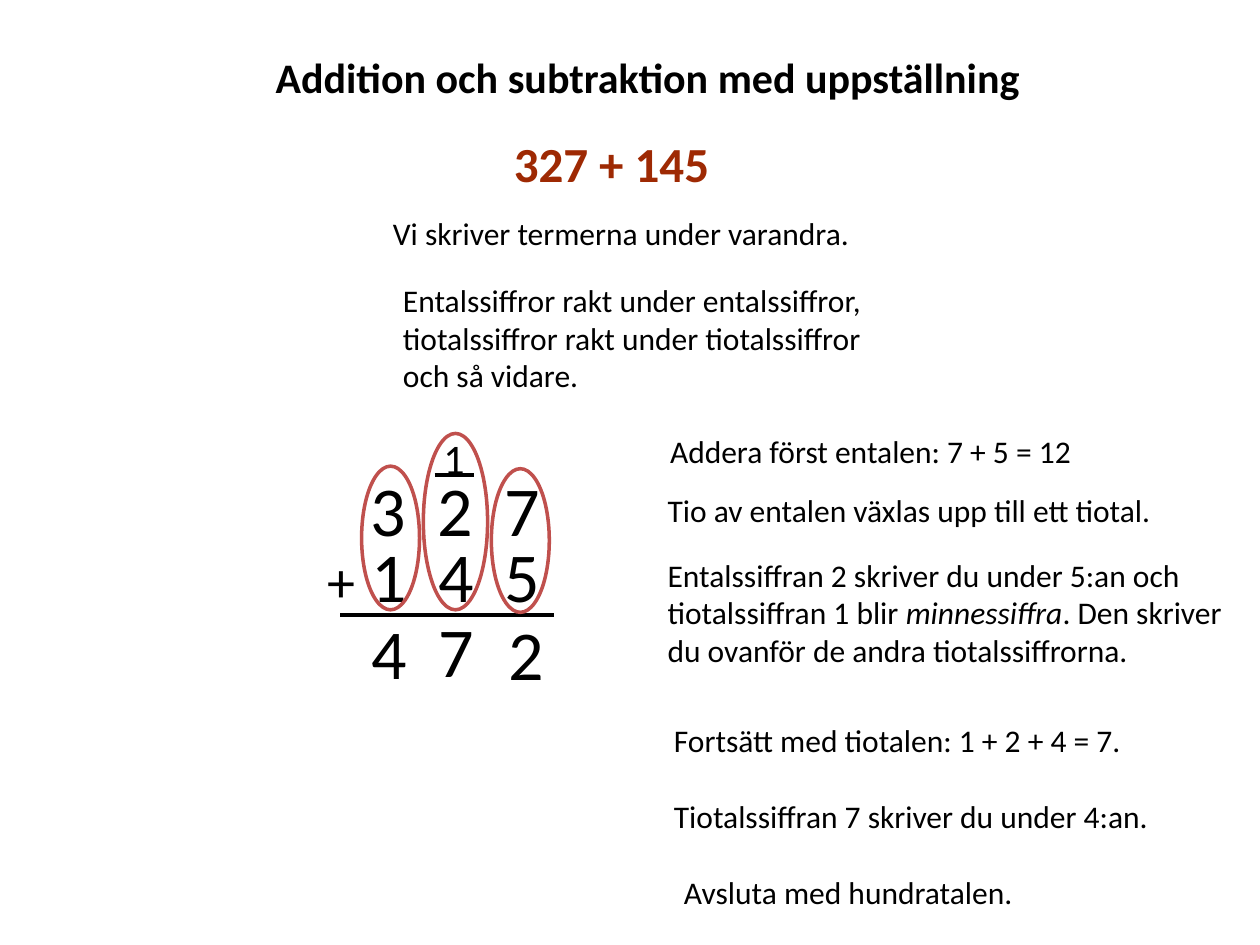
from dataclasses import dataclass

from lxml.etree import SubElement
from pptx import Presentation
from pptx.dml.color import RGBColor
from pptx.enum.shapes import MSO_CONNECTOR as CONN, MSO_SHAPE as SHAPE
from pptx.enum.text import MSO_AUTO_SIZE as AUTO
from pptx.oxml.ns import qn
from pptx.util import Inches, Pt

COLORS = {"text": "000000", "sum": "9E2903", "ring": "C0504D"}
FONT = "Calibri"


@dataclass
class Run:
    text: str
    size: int = 18
    bold: bool = False
    italic: bool = False
    color: str = "text"


@dataclass
class Label:
    x: float
    y: float
    w: float
    h: float
    runs: list[Run]


@dataclass
class Ring:
    x: float
    y: float
    w: float
    h: float


@dataclass
class Rule:
    x1: float
    x2: float
    y: float


HEADINGS = [
    Label(2.09, 0.36, 6.5, 0.5,
          [Run("Addition och subtraktion med uppställning", 24, bold=True)]),
    Label(3.98, 1.01, 2.24, 0.57, [Run("327 + 145", 28, bold=True, color="sum")]),
    Label(3.02, 1.65, 4, 0.4, [Run("Vi skriver termerna under varandra.")]),
    Label(3.1, 2.18, 4, 1.01,
          [Run("Entalssiffror rakt under entalssiffror, tiotalssiffror rakt "
               "under tiotalssiffror och så vidare.")]),
]
TERMS = [
    Label(2.84, 3.65, 2.24, 0.77, [Run("3  2  7", 40)]),
    Label(2.5, 4.18, 2.74, 0.77, [Run("+", 32), Run(" 1  4  5", 40)]),
    Label(3.42, 3.38, 0.46, 0.5, [Run("1", 24)]),
]
ANSWER = [Label(x, y, 0.46, 0.77, [Run(digit, 40)])
          for digit, x, y in (("4", 2.85, 4.79), ("7", 3.38, 4.77), ("2", 3.94, 4.8))]
STEPS = [
    Label(5.22, 3.38, 4, 0.4, [Run("Addera först entalen: 7 + 5 = 12")]),
    Label(5.2, 3.85, 4.48, 0.4, [Run("Tio av entalen växlas upp till ett tiotal.")]),
    Label(5.2, 4.36, 4.78, 1.01,
          [Run("Entalssiffran 2 skriver du under 5:an och tiotalssiffran 1 blir "),
           Run("minnessiffra", italic=True),
           Run(". Den skriver du ovanför de andra tiotalssiffrorna.")]),
    Label(5.25, 5.67, 4.48, 0.4, [Run("Fortsätt med tiotalen: 1 + 2 + 4 = 7.")]),
    Label(5.25, 6.28, 4.48, 0.4, [Run("Tiotalssiffran 7 skriver du under 4:an.")]),
    Label(5.33, 6.88, 4.48, 0.4, [Run("Avsluta med hundratalen.")]),
]
RINGS = [Ring(2.87, 3.7, 0.46, 1.14), Ring(3.36, 3.44, 0.51, 1.4),
         Ring(3.9, 3.72, 0.46, 1.14)]
RULES = [Rule(2.7, 4.4, 4.88), Rule(3.45, 3.76, 3.77)]


def rgb(name: str) -> RGBColor:
    """Return a palette colour."""
    return RGBColor.from_string(COLORS[name])


def add_label(s, label: Label) -> None:
    """Add a wrapped text box with its runs."""
    box = s.shapes.add_textbox(Inches(label.x), Inches(label.y),
                               Inches(label.w), Inches(label.h))
    tf = box.text_frame
    tf.word_wrap = True
    tf.auto_size = AUTO.SHAPE_TO_FIT_TEXT
    p = tf.paragraphs[0]
    for run in label.runs:
        r = p.add_run()
        r.text = run.text
        r.font.name = FONT
        r.font.size = Pt(run.size)
        r.font.bold = run.bold
        r.font.italic = run.italic
        r.font.color.rgb = rgb(run.color)


def add_ring(s, ring: Ring) -> None:
    """Add an unfilled ellipse around a column of digits."""
    sp = s.shapes.add_shape(SHAPE.OVAL, Inches(ring.x), Inches(ring.y),
                            Inches(ring.w), Inches(ring.h))
    sp.shadow.inherit = False
    sp.fill.background()
    sp.line.color.rgb = rgb("ring")
    sp.line.width = Pt(2)


def add_rule(s, rule: Rule) -> None:
    """Add a horizontal line without shadow."""
    y = Inches(rule.y)
    line = s.shapes.add_connector(CONN.STRAIGHT, Inches(rule.x1), y, Inches(rule.x2), y)
    line.line.color.rgb = rgb("text")
    line.line.width = Pt(2.25)
    SubElement(line._element.spPr, qn("a:effectLst"))


def main() -> None:
    """Build and save the slide."""
    prs = Presentation()
    prs.slide_width, prs.slide_height = Inches(10), Inches(7.5)
    s = prs.slides.add_slide(prs.slide_layouts[6])
    for label in HEADINGS + TERMS + ANSWER + STEPS:
        add_label(s, label)
    for rule in RULES:
        add_rule(s, rule)
    for ring in RINGS:
        add_ring(s, ring)
    prs.save("out.pptx")


if __name__ == "__main__":
    main()
